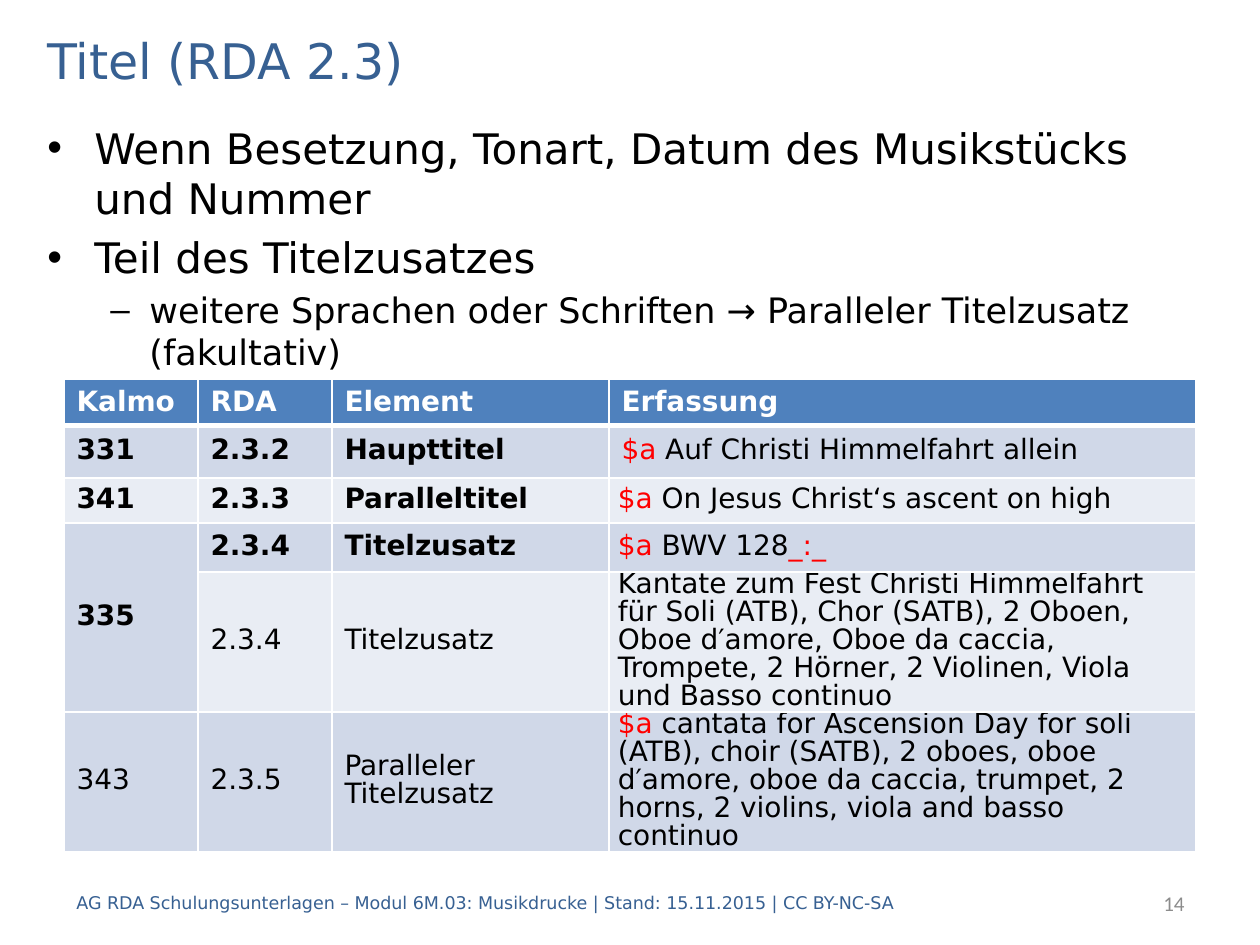
from typing import NamedTuple

from lxml import etree
from pptx import Presentation
from pptx.dml.color import RGBColor
from pptx.enum.text import MSO_ANCHOR, PP_ALIGN
from pptx.oxml.ns import qn
from pptx.util import Emu, Pt

PX = 914400 // 126
MID, TOP = MSO_ANCHOR.MIDDLE, MSO_ANCHOR.TOP
LEFT, RIGHT = PP_ALIGN.LEFT, PP_ALIGN.RIGHT
SANS, CAL = "DejaVu Sans", "Calibri"
NAVY = RGBColor(0x37, 0x60, 0x92)
BLUE = RGBColor(0x4F, 0x81, 0xBD)
DARK = RGBColor(0xD0, 0xD8, 0xE8)
PALE = RGBColor(0xE9, 0xED, 0xF4)
GRAY = RGBColor(0x8C, 0x8C, 0x8C)
RED = RGBColor(0xFF, 0, 0)
BLACK = RGBColor(0, 0, 0)
WHITE = RGBColor(0xFF, 0xFF, 0xFF)


class Label(NamedTuple):
    x: int
    y: int
    w: int
    h: int
    text: str
    size: int
    color: RGBColor
    font: str = SANS
    align: PP_ALIGN = LEFT


class Point(NamedTuple):
    text: str
    size: int
    mark: str
    left: int
    hang: int


class Row(NamedTuple):
    high: int
    fill: RGBColor
    bold: int
    inset: int
    cells: tuple


LABELS = [
    Label(35, 24, 1191, 71, "Titel (RDA 2.3)", 28, NAVY),
    Label(64, 878, 1042, 50,
          "AG RDA Schulungsunterlagen – Modul 6M.03: Musikdrucke"
          " | Stand: 15.11.2015 | CC BY-NC-SA", 10, NAVY),
    Label(997, 878, 200, 50, "14", 12, GRAY, CAL, RIGHT),
]
POINTS = [
    Point("Wenn Besetzung, Tonart, Datum des Musikstücks und Nummer",
          24, "•", 47, 47),
    Point("Teil des Titelzusatzes", 24, "•", 47, 47),
    Point("weitere Sprachen oder Schriften → Paralleler Titelzusatz "
          "(fakultativ)", 20, "–", 102, 39),
]
COLS = [134, 134, 277, 587]
ROWS = [
    Row(43, BLUE, 4, 13, ("Kalmo", "RDA", "Element", "Erfassung")),
    Row(53, DARK, 3, 13, ("331", "2.3.2", "Haupttitel",
                          "$a| Auf Christi Himmelfahrt allein")),
    Row(45, PALE, 3, 9, ("341", "2.3.3", "Paralleltitel",
                         "$a |On Jesus Christ‘s ascent on high")),
    Row(49, DARK, 3, 9, ("335", "2.3.4", "Titelzusatz",
                         "$a |BWV 128|_:_")),
    Row(140, PALE, 0, 9, (
        "", "2.3.4", "Titelzusatz",
        "Kantate zum Fest Christi Himmelfahrt für Soli (ATB), Chor (SATB), "
        "2 Oboen, Oboe d′amore, Oboe da caccia, Trompete, 2 Hörner, "
        "2 Violinen, Viola und Basso continuo")),
    Row(140, DARK, 0, 9, (
        "343", "2.3.5", "Paralleler Titelzusatz",
        "$a |cantata for Ascension Day for soli (ATB), choir (SATB), "
        "2 oboes, oboe d′amore, oboe da caccia, trumpet, 2 horns, "
        "2 violins, viola and basso continuo")),
]


def px(n: int) -> Emu:
    return Emu(n * PX)


def style(run, size: int, color: RGBColor, font: str = SANS,
          bold: bool = False) -> None:
    run.font.size = Pt(size)
    run.font.name = font
    run.font.bold = bold
    run.font.color.rgb = color


def frame(slide, x: int, y: int, w: int, h: int, anchor):
    box = slide.shapes.add_textbox(px(x), px(y), px(w), px(h))
    box.text_frame.word_wrap = True
    box.text_frame.vertical_anchor = anchor
    return box.text_frame


def label(slide, item: Label) -> None:
    body = frame(slide, item.x, item.y, item.w, item.h, MID)
    body.text = item.text
    para = body.paragraphs[0]
    para.alignment = item.align
    style(para.runs[0], item.size, item.color, item.font)


def points(slide) -> None:
    body = frame(slide, 35, 116, 1191, 753, TOP)
    body.text = "\n".join(item.text for item in POINTS)
    for para, item in zip(body.paragraphs, POINTS):
        style(para.runs[0], item.size, BLACK)
        para.space_before = Pt(item.size * 0.2)
        prop = para._p.get_or_add_pPr()
        prop.set("marL", str(px(item.left)))
        prop.set("indent", str(-px(item.hang)))
        etree.SubElement(prop, qn("a:buFont"), typeface="Arial")
        etree.SubElement(prop, qn("a:buChar"), char=item.mark)


def edges(cell, head: bool, below: bool) -> None:
    prop = cell._tc.get_or_add_tcPr()
    for i, side in enumerate("LRTB"):
        thick = side == "B" and head or side == "T" and below
        line = etree.Element(qn("a:ln" + side), w=str(Pt(3 if thick else 1)))
        fill = etree.SubElement(line, qn("a:solidFill"))
        etree.SubElement(fill, qn("a:srgbClr"), val=str(WHITE))
        prop.insert(i, line)


def write(cell, text: str, bold: bool, head: bool) -> None:
    para = cell.text_frame.paragraphs[0]
    for part in text.split("|"):
        run = para.add_run()
        run.text = part
        color = WHITE if head else RED if part[:1] in ("$", "_") else BLACK
        style(run, 16, color, bold=bold)
    if not head:
        cell.vertical_anchor = MID
        para.line_spacing = Pt(16)
        para.space_before = para.space_after = Pt(6)


def grid(slide) -> None:
    high = sum(row.high for row in ROWS)
    table = slide.shapes.add_table(
        len(ROWS), len(COLS), px(64), px(379), px(sum(COLS)), px(high)).table
    for col, wide in zip(table.columns, COLS):
        col.width = px(wide)
    table.cell(3, 0).merge(table.cell(4, 0))
    for r, row in enumerate(ROWS):
        table.rows[r].height = px(row.high)
        for c, text in enumerate(row.cells):
            cell = table.cell(r, c)
            cell.fill.solid()
            cell.fill.fore_color.rgb = row.fill
            edges(cell, r == 0, r == 1)
            if c == 3 and row.inset == 9:
                cell.margin_left = cell.margin_right = px(row.inset)
                cell.margin_top = cell.margin_bottom = 0
            if text:
                write(cell, text, c < row.bold, r == 0)


def main() -> None:
    deck = Presentation()
    deck.slide_width, deck.slide_height = px(1260), px(945)
    slide = deck.slides.add_slide(deck.slide_layouts[6])
    points(slide)
    for item in LABELS:
        label(slide, item)
    grid(slide)
    deck.save("out.pptx")


if __name__ == "__main__":
    main()
